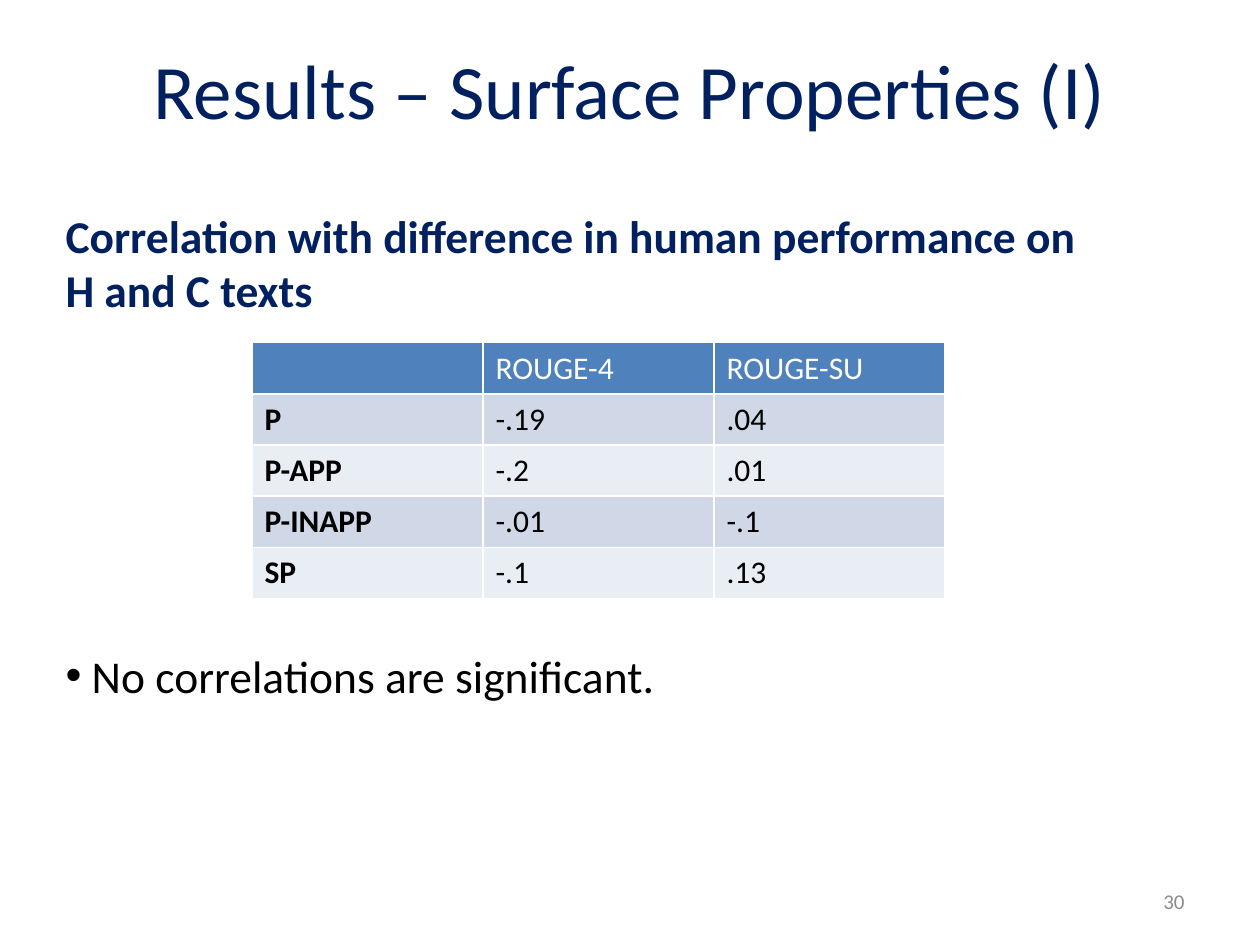
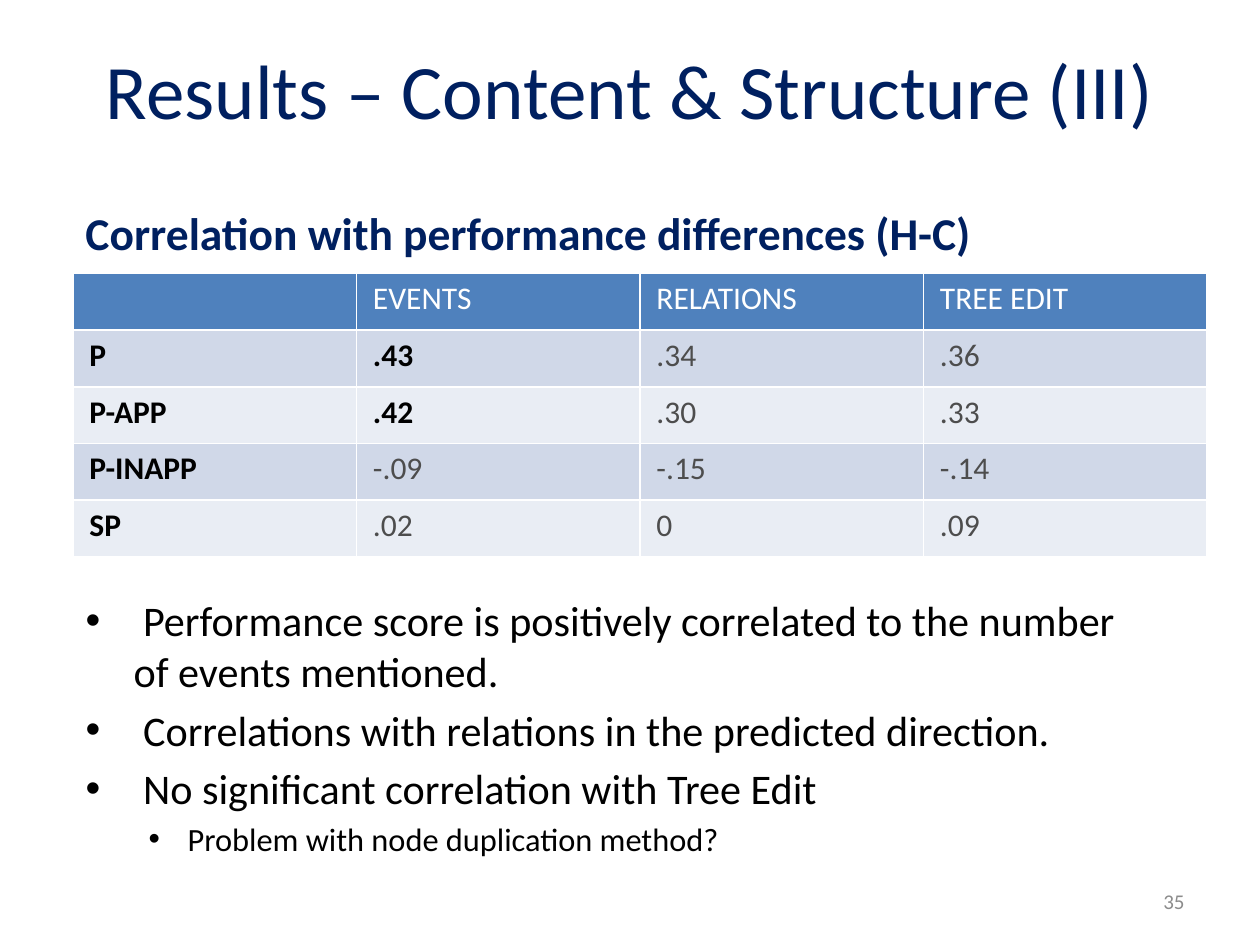
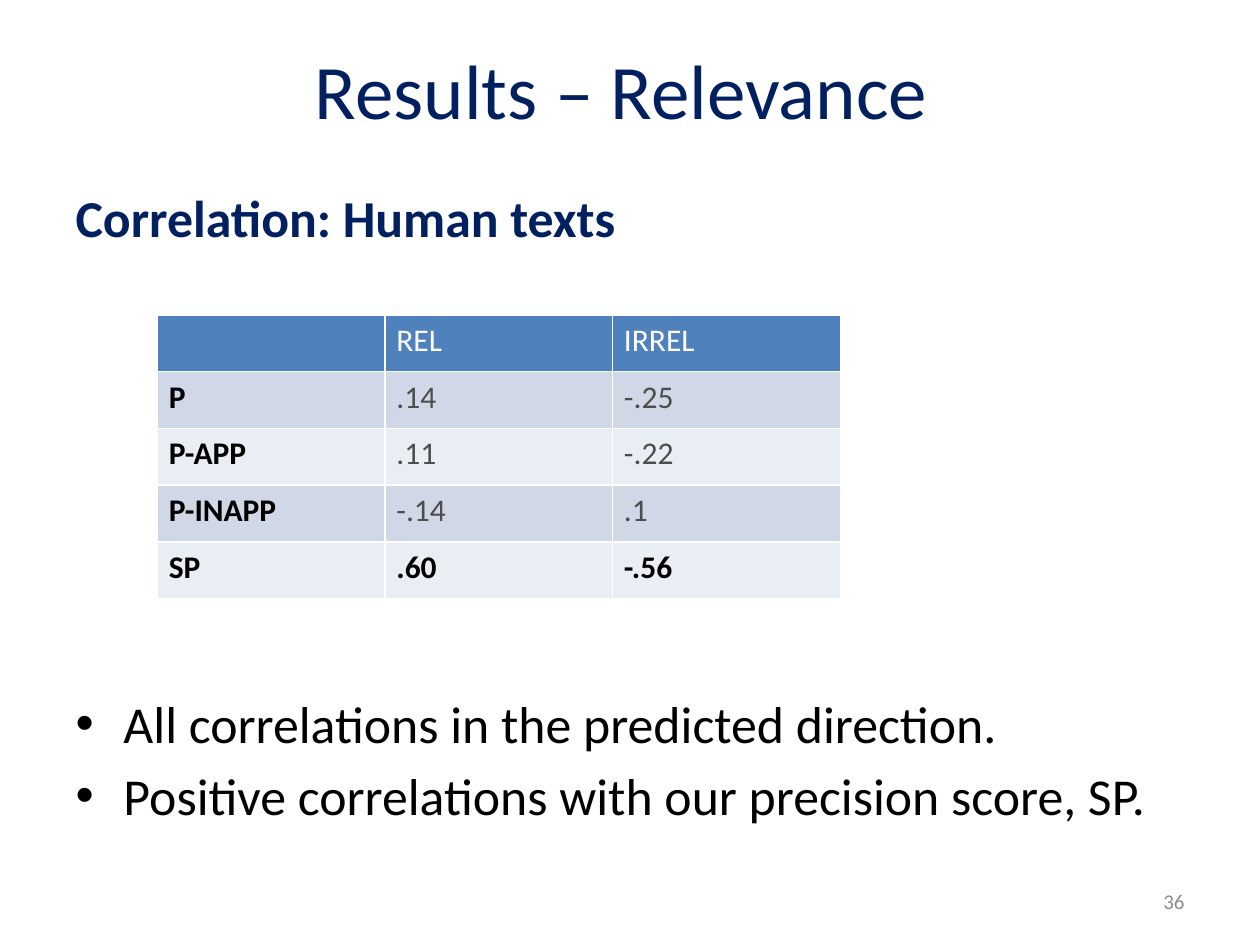
"""Build three result slides, each with a title, a correlation table and findings."""
from dataclasses import dataclass

from lxml import etree
from pptx import Presentation
from pptx import util as u
from pptx.dml.color import RGBColor
from pptx.enum import text
from pptx.oxml.ns import qn

NAVY = RGBColor(0x00, 0x20, 0x60)
BLACK = RGBColor(0x00, 0x00, 0x00)
WHITE = RGBColor(0xFF, 0xFF, 0xFF)
DIM = RGBColor(0x4D, 0x4D, 0x4D)
NUMBER_GREY = RGBColor(0x8C, 0x8C, 0x8C)
HEADER_BLUE = RGBColor(0x4F, 0x81, 0xBD)
BANDS = (RGBColor(0xD0, 0xD8, 0xE8), RGBColor(0xE9, 0xED, 0xF4))
FONT = "Calibri"
MEASURES = ("P", "P-APP", "P-INAPP", "SP")


@dataclass(frozen=True)
class Box:
    left: float
    top: float
    width: float
    height: float

    def lengths(self) -> tuple:
        return tuple(u.Inches(n) for n in (self.left, self.top, self.width, self.height))


TITLE_BOX = Box(0.5, 0.08, 9, 1.25)
NUMBER_BOX = Box(7.17, 6.95, 2.33, 0.4)


@dataclass(frozen=True)
class Line:
    text: str
    size: float
    color: RGBColor = BLACK
    bold: bool = False
    bullet: str = ""
    margin: float = 0
    hanging: float = 0
    gap: float = 0
    level: int = 0


@dataclass(frozen=True)
class Scores:
    box: Box
    columns: tuple[str, ...]
    values: tuple[tuple[str, ...], ...]
    inset: float
    color: RGBColor = DIM
    significant: tuple[str, ...] = ()


@dataclass(frozen=True)
class Result:
    number: str
    title: str
    body_box: Box
    body: tuple[Line, ...]
    scores: Scores
    heading_box: Box | None = None
    heading: Line | None = None


def write(paragraph, words: str, *, size: float, color: RGBColor,
          bold: bool = False, align=None) -> None:
    """Add one formatted run to a paragraph."""
    run = paragraph.add_run()
    run.text = words
    run.font.name = FONT
    run.font.size = u.Pt(size)
    run.font.bold = bold
    run.font.color.rgb = color
    if align is not None:
        paragraph.alignment = align


def place(shape, box: Box) -> None:
    """Move and size a placeholder."""
    shape.left, shape.top, shape.width, shape.height = box.lengths()


def write_lines(frame, lines: tuple[Line, ...]) -> None:
    """Fill a text frame with list lines."""
    for index, line in enumerate(lines):
        paragraph = frame.add_paragraph() if index else frame.paragraphs[0]
        paragraph.level = line.level
        paragraph.space_before = u.Pt(line.gap)
        write(paragraph, line.text, size=line.size, color=line.color, bold=line.bold)
        properties = paragraph._p.get_or_add_pPr()
        properties.set("marL", str(u.Inches(line.margin)))
        properties.set("indent", str(-u.Inches(line.hanging)))
        if line.bullet:
            etree.SubElement(properties, qn("a:buChar")).set("char", line.bullet)
        else:
            etree.SubElement(properties, qn("a:buNone"))


def draw_text(slide, box: Box, wrap: bool = True):
    """Add a text box and return its frame."""
    frame = slide.shapes.add_textbox(*box.lengths()).text_frame
    frame.word_wrap = wrap
    return frame


def draw_scores(slide, scores: Scores) -> None:
    """Draw a banded table with one row for each measure."""
    rows = [("", *scores.columns)]
    rows += [(name, *values) for name, values in zip(MEASURES, scores.values)]
    grid = slide.shapes.add_table(len(rows), len(rows[0]), *scores.box.lengths()).table
    for r, row in enumerate(rows):
        for c, value in enumerate(row):
            cell = grid.cell(r, c)
            cell.margin_left = cell.margin_right = u.Inches(scores.inset)
            cell.fill.solid()
            cell.fill.fore_color.rgb = BANDS[(r - 1) % 2] if r else HEADER_BLUE
            strong = r > 0 and (c == 0 or value in scores.significant)
            color = WHITE if r == 0 else BLACK if strong else scores.color
            if value:
                write(cell.text_frame.paragraphs[0], value, size=18, color=color, bold=strong)


def draw_result(deck, result: Result) -> None:
    """Add one result slide."""
    slide = deck.slides.add_slide(deck.slide_layouts[1])
    title, body = slide.placeholders
    place(title, TITLE_BOX)
    write(title.text_frame.paragraphs[0], result.title, size=44, color=NAVY,
          align=text.PP_ALIGN.CENTER)
    place(body, result.body_box)
    body.text_frame.auto_size = text.MSO_AUTO_SIZE.NONE
    write_lines(body.text_frame, result.body)
    if result.heading:
        write_lines(draw_text(slide, result.heading_box, wrap=False), (result.heading,))
    draw_scores(slide, result.scores)
    number = draw_text(slide, NUMBER_BOX)
    number.vertical_anchor = text.MSO_ANCHOR.MIDDLE
    write(number.paragraphs[0], result.number, size=12, color=NUMBER_GREY,
          align=text.PP_ALIGN.RIGHT)


def finding(words: str, size: float, gap: float) -> Line:
    """Describe a top-level bullet with a hanging indent."""
    return Line(words, size, bullet="•", margin=0.38, hanging=0.38, gap=gap)


RESULTS = (
    Result(
        "30", "Results – Surface Properties (I)", Box(0.42, 1.6, 8.42, 4.04),
        (Line("Correlation with difference in human performance on H and C texts",
              26, NAVY, True),
         Line(" No correlations are significant.", 26, bullet="•", gap=189)),
        Scores(Box(2, 2.72, 5.5, 2.03), ("ROUGE-4", "ROUGE-SU"),
               (("-.19", ".04"), ("-.2", ".01"), ("-.01", "-.1"), ("-.1", ".13")),
               inset=0.1, color=BLACK),
    ),
    Result(
        "35", "Results – Content & Structure (III)", Box(0.58, 4.67, 8.67, 2.08),
        (finding(" Performance score is positively correlated to the number of events mentioned.",
                 24.1, 0),
         finding(" Correlations with relations in the predicted direction.", 24.1, 4.6),
         finding(" No significant correlation with Tree Edit", 24.1, 4.6),
         Line("Problem with node duplication method?", 18.5, bullet="•",
              margin=0.81, hanging=0.31, gap=3.5, level=1)),
        Scores(Box(0.58, 2.17, 9, 2.25), ("EVENTS", "RELATIONS", "TREE EDIT"),
               ((".43", ".34", ".36"), (".42", ".30", ".33"),
                ("-.09", "-.15", "-.14"), (".02", "0", ".09")),
               inset=0.13, significant=(".43", ".42")),
        Box(0.58, 1.58, 7.32, 0.54),
        Line("Correlation with performance differences (H-C)", 26, NAVY, True),
    ),
    Result(
        "36", "Results – Relevance ", Box(0.5, 1.42, 9, 5.42),
        (Line("Correlation: Human texts", 29.6, NAVY, True, margin=0.38, hanging=0.38),
         finding("All correlations in the predicted direction.", 29.6, 254),
         finding("Positive correlations with our precision score, SP.", 29.6, 5.6)),
        Scores(Box(1.25, 2.5, 5.42, 2.25), ("REL", "IRREL"),
               ((".14", "-.25"), (".11", "-.22"), ("-.14", ".1"), (".60", "-.56")),
               inset=0.09, significant=(".60", "-.56")),
    ),
)


def main() -> None:
    """Build the deck and save it."""
    deck = Presentation()
    deck.slide_width, deck.slide_height = u.Inches(10), u.Inches(7.5)
    for result in RESULTS:
        draw_result(deck, result)
    deck.save("out.pptx")


if __name__ == "__main__":
    main()
